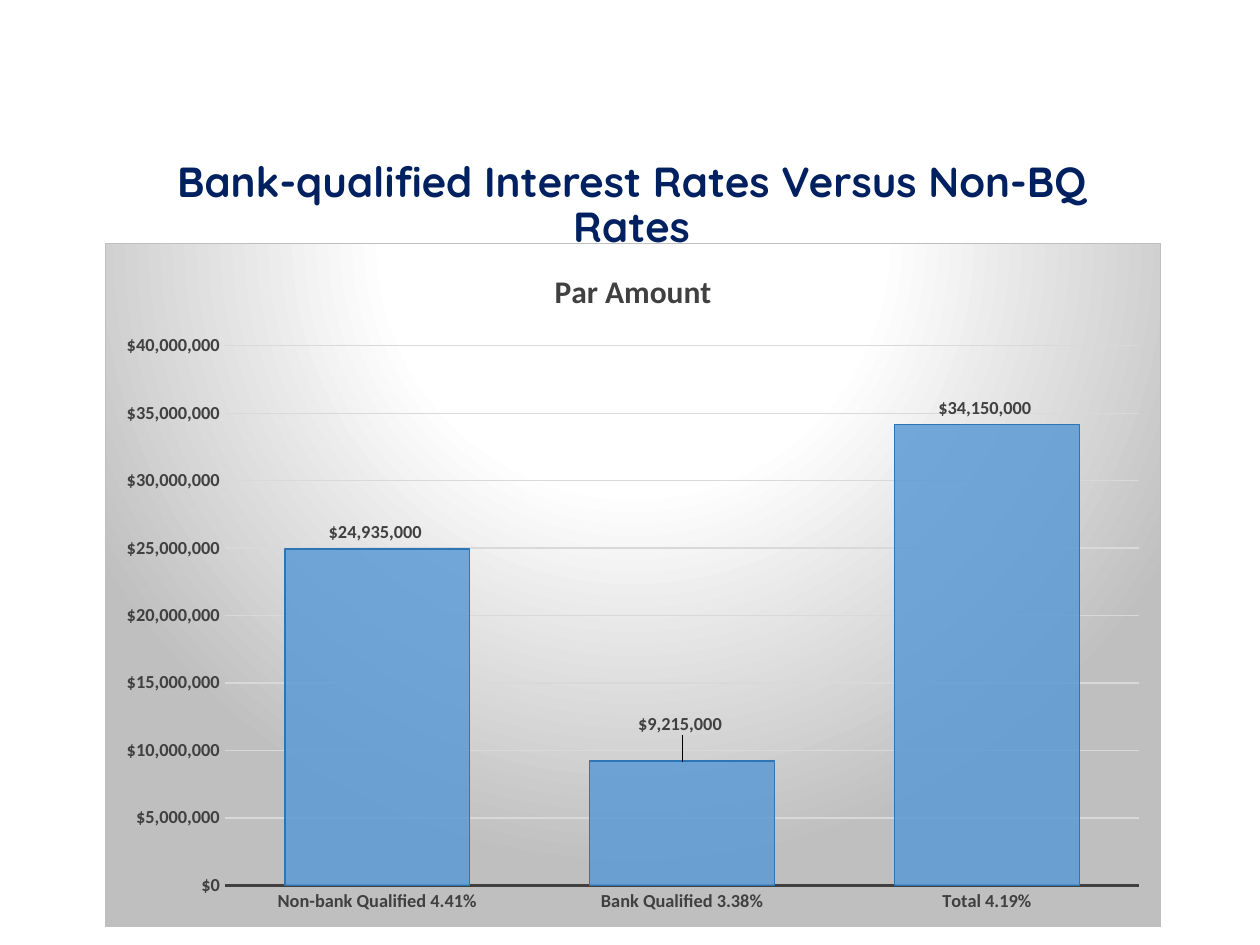
from lxml import etree
from pptx import Presentation
from pptx.chart.data import CategoryChartData
from pptx.dml.color import RGBColor
from pptx.enum.chart import XL_CHART_TYPE, XL_LABEL_POSITION, XL_TICK_MARK
from pptx.enum.text import MSO_ANCHOR, PP_ALIGN
from pptx.oxml import parse_xml
from pptx.oxml.ns import nsdecls, qn
from pptx.util import Emu, Pt

COLUMN = XL_CHART_TYPE.COLUMN_CLUSTERED
OUTSIDE = XL_LABEL_POSITION.OUTSIDE_END
NO_TICK = XL_TICK_MARK.NONE
MIDDLE = MSO_ANCHOR.MIDDLE
CENTER = PP_ALIGN.CENTER

NAVY = RGBColor(0x00, 0x20, 0x60)
BLACK = RGBColor(0x00, 0x00, 0x00)
DARK = RGBColor(0x40, 0x40, 0x40)
PALE = RGBColor(0xD9, 0xD9, 0xD9)
BLUE = RGBColor(0x5B, 0x9B, 0xD5)
EDGE = RGBColor(0x2E, 0x75, 0xB6)

MONEY = '"$"#,##0'
LABEL = '"$"#,##0_);[Red]\\("$"#,##0\\)'
RATES = {
    "Non-bank Qualified 4.41%": 24935000,
    "Bank Qualified 3.38%": 9215000,
    "Total 4.19%": 34150000,
}


def box(*sides):
    """Turn px at 126 to the inch into EMU."""
    return [Emu(round(side * 914400 / 126)) for side in sides]


def style(font, **values):
    font.color.rgb = values.pop("color")
    for name, value in values.items():
        setattr(font, name, value)


deck = Presentation()
deck.slide_width, deck.slide_height = box(1260, 945)
slide = deck.slides.add_slide(deck.slide_layouts[6])

# Heading
frame = slide.shapes.add_textbox(*box(105, 170, 1053, 73)).text_frame
frame.word_wrap = True
frame.vertical_anchor = MIDDLE
head = frame.paragraphs[0]
head.alignment = CENTER
head.line_spacing = 0.9
run = head.add_run()
run.text = "Bank-qualified Interest Rates Versus Non-BQ Rates"
style(run.font, name="Quicksand", size=Pt(24), bold=True, color=NAVY)

# Chart
data = CategoryChartData(number_format=MONEY)
data.categories = list(RATES)
data.add_series("Par Amount", list(RATES.values()))
chart = slide.shapes.add_chart(COLUMN, *box(105, 243, 1056, 684), data).chart
style(chart.font, name="Calibri", size=Pt(10), color=BLACK)
chart.has_legend = False
chart.has_title = True
title = chart.chart_title
title.include_in_layout = False
run = title.text_frame.paragraphs[0].add_run()
run.text = "Par Amount"
bold = {"name": "Calibri", "bold": True, "color": DARK}
style(run.font, size=Pt(18), **bold)
small = {"size": Pt(10.5), **bold}

# Axes
cat, val = chart.category_axis, chart.value_axis
for axis in (cat, val):
    axis.major_tick_mark = axis.minor_tick_mark = NO_TICK
    style(axis.tick_labels.font, **small)
cat.format.line.color.rgb = DARK
cat.format.line.width = Pt(1.5)
val.format.line.fill.background()
val.minimum_scale, val.maximum_scale, val.major_unit = 0, 40000000, 5000000
val.tick_labels.number_format = MONEY
val.tick_labels.number_format_is_linked = False
grid = val.major_gridlines.format.line
grid.color.rgb = PALE
grid.width = Pt(0.75)

# Bars
plot = chart.plots[0]
plot.vary_by_categories = False
plot.gap_width = 65
bars = plot.series[0]
bars.format.fill.solid()
bars.format.fill.fore_color.rgb = BLUE
bars.format.line.color.rgb = EDGE
bars.format.line.width = Pt(0.75)
tint = bars.format.fill._xPr.find(qn("a:solidFill"))[0]
etree.SubElement(tint, qn("a:alpha"), val="85000")

# Labels, the middle one raised
labels = bars.data_labels
labels.show_value = True
labels.number_format = LABEL
labels.number_format_is_linked = False
labels.position = OUTSIDE
style(labels.font, **small)
mid = bars.points[1].data_label
style(mid.font, **small)
mid.position = OUTSIDE
spot = bars._element.find(".//" + qn("c:dLbl")).find(qn("c:idx"))
form = etree.Element(qn("c:numFmt"), formatCode=LABEL, sourceLinked="0")
spot.addnext(form)
spot.addnext(parse_xml(
    f'<c:layout {nsdecls("c")}><c:manualLayout>'
    '<c:x val="0"/><c:y val="-0.03"/></c:manualLayout></c:layout>'))

# Radial ground and border
stops = "".join(
    f'<a:gs pos="{at * 1000}"><a:srgbClr val="{tone}"/></a:gs>'
    for at, tone in ((0, "FFFFFF"), (39, "FFFFFF"), (100, "BFBFBF")))
ground = parse_xml(
    f'<c:spPr {nsdecls("c", "a")}><a:gradFill><a:gsLst>{stops}</a:gsLst>'
    '<a:path path="circle"><a:fillToRect l="50000" t="-80000" r="50000"'
    ' b="180000"/></a:path></a:gradFill><a:ln w="9525"><a:solidFill>'
    '<a:srgbClr val="BFBFBF"/></a:solidFill></a:ln></c:spPr>')
chart._chartSpace.find(qn("c:chart")).addnext(ground)

deck.save("out.pptx")
